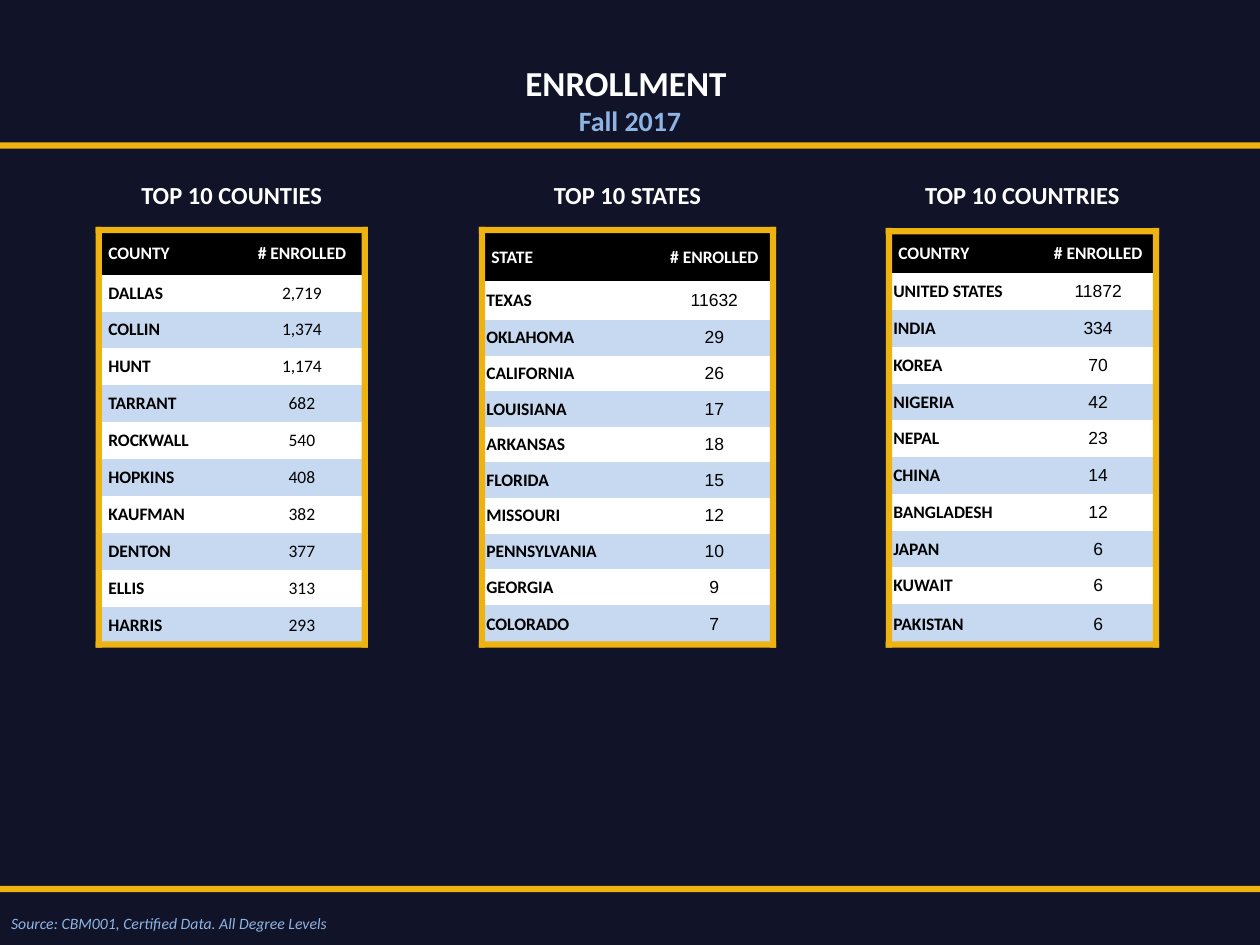
from dataclasses import dataclass

from pptx import Presentation
from pptx.dml.color import RGBColor
from pptx.enum.shapes import MSO_SHAPE
from pptx.enum.text import MSO_ANCHOR, MSO_AUTO_SIZE, PP_ALIGN
from pptx.util import Inches, Pt

RECT = MSO_SHAPE.RECTANGLE
LEFT, CENTER = PP_ALIGN.LEFT, PP_ALIGN.CENTER
TOP, MIDDLE = MSO_ANCHOR.TOP, MSO_ANCHOR.MIDDLE
NO_FIT = MSO_AUTO_SIZE.NONE
COLUMNS, ROWS, UNIT = 100, 75, 0.1
BAR = 0.5
PLAIN_TABLE = "{2D5ABB26-0587-4C30-8999-92F81FD0307C}"


@dataclass(frozen=True)
class Theme:
    """Colours, fonts and type sizes of the slide."""
    navy: str = "111428"
    gold: str = "EEB211"
    sky: str = "8EB4E3"
    band: str = "C6D9F1"
    white: str = "FFFFFF"
    black: str = "000000"
    font: str = "Calibri"
    number_font: str = "Arial"
    title: int = 20
    subtitle: int = 16
    heading: int = 14
    body: int = 10
    source: int = 9


@dataclass(frozen=True)
class Box:
    """A rectangle in grid columns and rows."""
    x: float
    y: float
    w: float
    h: float

    def emu(self):
        """Return left, top, width and height as slide lengths."""
        return [grid(v) for v in (self.x, self.y, self.w, self.h)]


@dataclass(frozen=True)
class Ranking:
    """A ranked list with its table proportions in grid rows."""
    heading: str
    label: str
    entries: tuple
    name_share: float
    header: float
    first: float
    pitch: float
    inset: float
    number_font: str


THEME = Theme()
RANKINGS = (
    (Box(7.6, 18, 21.6, 33.4), Ranking(
        "TOP 10 COUNTIES", "COUNTY",
        (("DALLAS", "2,719"), ("COLLIN", "1,374"), ("HUNT", "1,174"),
         ("TARRANT", "682"), ("ROCKWALL", "540"), ("HOPKINS", "408"),
         ("KAUFMAN", "382"), ("DENTON", "377"), ("ELLIS", "313"),
         ("HARRIS", "293")),
        0.54, 3.3, 2.93, 2.93, 0.5, THEME.font)),
    (Box(38, 18, 23.6, 33.4), Ranking(
        "TOP 10 STATES", "STATE",
        (("TEXAS", "11632"), ("OKLAHOMA", "29"), ("CALIFORNIA", "26"),
         ("LOUISIANA", "17"), ("ARKANSAS", "18"), ("FLORIDA", "15"),
         ("MISSOURI", "12"), ("PENNSYLVANIA", "10"), ("GEORGIA", "9"),
         ("COLORADO", "7")),
        0.61, 3.8, 3.1, 2.83, 0.1, THEME.number_font)),
    (Box(70.3, 18.1, 21.7, 33.3), Ranking(
        "TOP 10 COUNTRIES", "COUNTRY",
        (("UNITED STATES", "11872"), ("INDIA", "334"), ("KOREA", "70"),
         ("NIGERIA", "42"), ("NEPAL", "23"), ("CHINA", "14"),
         ("BANGLADESH", "12"), ("JAPAN", "6"), ("KUWAIT", "6"),
         ("PAKISTAN", "6")),
        0.58, 3.1, 2.92, 2.92, 0.1, THEME.number_font)),
)


def grid(cells):
    """Convert grid cells to a slide length."""
    return Inches(cells * UNIT)


def style(p, size, color, font=THEME.font, bold=False, italic=False, align=LEFT):
    """Format a paragraph and its runs."""
    p.alignment = align
    for r in p.runs:
        r.font.name, r.font.size = font, Pt(size)
        r.font.bold, r.font.italic = bold, italic
        r.font.color.rgb = RGBColor.from_string(color)


def add_label(s, box, text, wrap=True, **look):
    """Add a one-paragraph text box."""
    tf = s.shapes.add_textbox(*box.emu()).text_frame
    tf.word_wrap = wrap
    tf.text = text
    style(tf.paragraphs[0], **look)


def add_bar(s, box):
    """Add a solid gold bar."""
    sp = s.shapes.add_shape(RECT, *box.emu())
    sp.shadow.inherit = False
    sp.fill.solid()
    sp.fill.fore_color.rgb = RGBColor.from_string(THEME.gold)
    sp.line.fill.background()


def add_title(s, box):
    """Place the title and subtitle in the title placeholder."""
    sp = s.shapes.title
    sp.left, sp.top, sp.width, sp.height = box.emu()
    tf = sp.text_frame
    tf.text = "ENROLLMENT \nFall 2017"
    tf.auto_size, tf.vertical_anchor = NO_FIT, TOP
    title, subtitle = tf.paragraphs
    style(title, THEME.title, THEME.white, bold=True, align=CENTER)
    style(subtitle, THEME.subtitle, THEME.sky, bold=True, align=CENTER)


def fill_cell(cell, text, fill, inset, **look):
    """Write and format one table cell."""
    cell.text = text
    cell.vertical_anchor = MIDDLE
    cell.margin_left = cell.margin_right = grid(inset)
    cell.margin_top = cell.margin_bottom = grid(inset)
    cell.fill.solid()
    cell.fill.fore_color.rgb = RGBColor.from_string(fill)
    style(cell.text_frame.paragraphs[0], THEME.body, **look)


def add_ranking_table(s, box, ranking):
    """Add the banded table of one ranking."""
    count = len(ranking.entries)
    table = s.shapes.add_table(count + 1, 2, *box.emu()).table
    table._tbl.tblPr.find("{*}tableStyleId").text = PLAIN_TABLE
    table.first_row = table.horz_banding = False
    shares = (ranking.name_share, 1 - ranking.name_share)
    for column, share in zip(table.columns, shares):
        column.width = grid(box.w * share)
    heights = [ranking.header, ranking.first] + [ranking.pitch] * (count - 2)
    heights.append(box.h - sum(heights))
    for row, height in zip(table.rows, heights):
        row.height = grid(height)
    for c, text in enumerate((ranking.label, "# ENROLLED")):
        fill_cell(table.cell(0, c), text, THEME.black, 0.5, color=THEME.white,
                  bold=True, align=(LEFT, CENTER)[c])
    for i, (name, number) in enumerate(ranking.entries, 1):
        fill = THEME.white if i % 2 else THEME.band
        fill_cell(table.cell(i, 0), name, fill, ranking.inset,
                  color=THEME.black, bold=True)
        fill_cell(table.cell(i, 1), number, fill, ranking.inset,
                  color=THEME.black, font=ranking.number_font, align=CENTER)


def add_frame(s, box):
    """Frame a box with four gold bars."""
    for y in (box.y, box.y + box.h - BAR):
        add_bar(s, Box(box.x, y, box.w, BAR))
    for x in (box.x, box.x + box.w - BAR):
        add_bar(s, Box(x, box.y, BAR, box.h))


def add_ranking(s, box, ranking):
    """Add a heading above a framed ranking table."""
    add_label(s, Box(box.x, 13.8, box.w, 3.4), ranking.heading,
              size=THEME.heading, color=THEME.white, bold=True, align=CENTER)
    inner = Box(box.x + BAR, box.y + BAR, box.w - 2 * BAR, box.h - 1.5 * BAR)
    add_ranking_table(s, inner, ranking)
    add_frame(s, box)


def add_footer(s, box):
    """Add the closing rule and the source line below it."""
    add_bar(s, Box(box.x, box.y, box.w, BAR))
    add_label(s, Box(box.x - 0.1, box.y + 1.7, 27.6, 2.5),
              "Source: CBM001, Certified Data. All Degree Levels", wrap=False,
              size=THEME.source, color=THEME.sky, italic=True)


def main():
    """Build and save the enrollment slide."""
    prs = Presentation()
    prs.slide_width, prs.slide_height = grid(COLUMNS), grid(ROWS)
    s = prs.slides.add_slide(prs.slide_layouts[5])
    s.background.fill.solid()
    s.background.fill.fore_color.rgb = RGBColor.from_string(THEME.navy)
    add_title(s, Box(0, 4.4, COLUMNS, 10.1))
    add_bar(s, Box(0, 11.3, COLUMNS, BAR))
    for box, ranking in RANKINGS:
        add_ranking(s, box, ranking)
    add_footer(s, Box(0, 70.3, COLUMNS, 4.7))
    prs.save("out.pptx")


if __name__ == "__main__":
    main()
